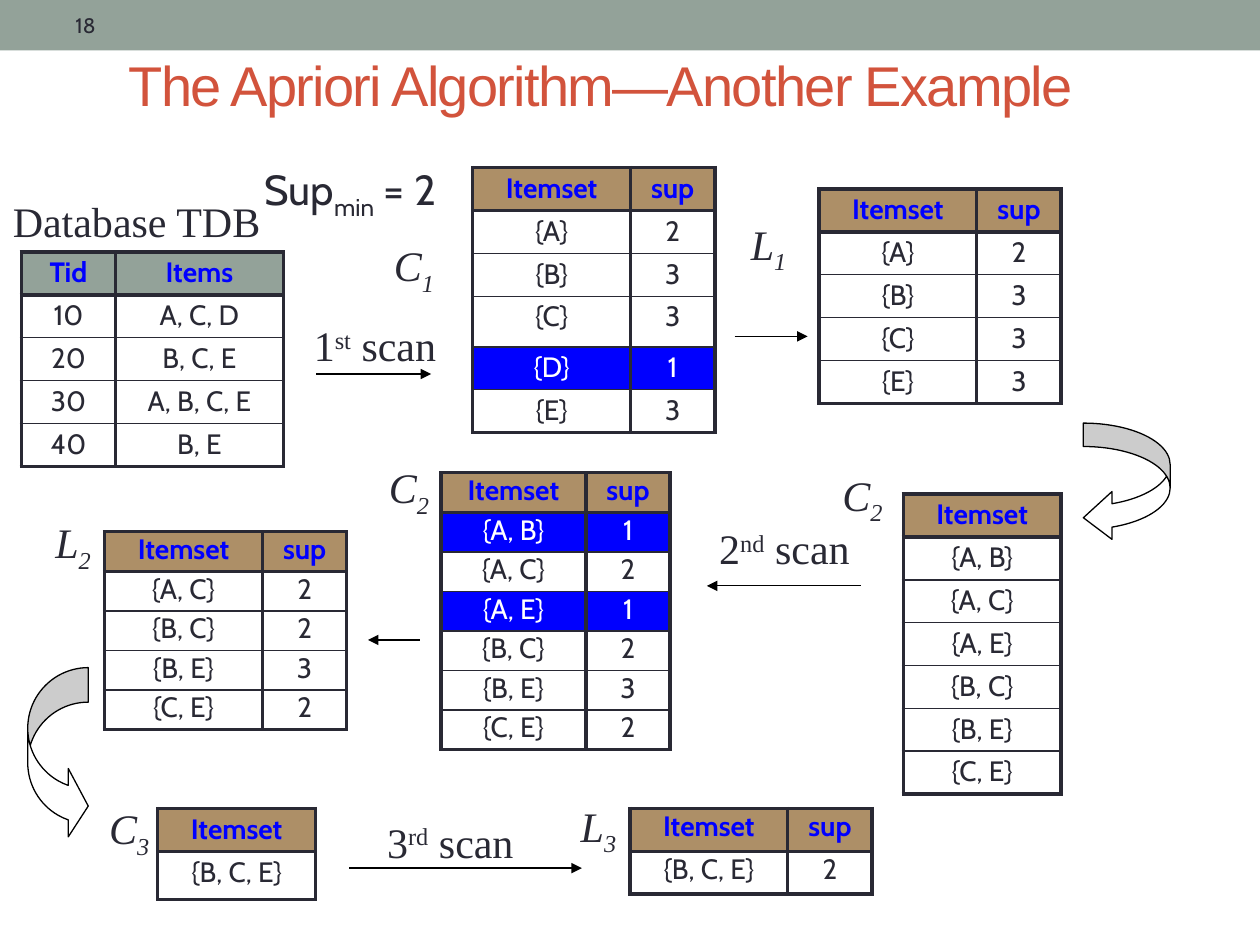
from lxml.etree import SubElement
from pptx import Presentation
from pptx.dml.color import RGBColor
from pptx.enum.shapes import MSO_CONNECTOR, MSO_SHAPE
from pptx.enum.text import MSO_ANCHOR, MSO_AUTO_SIZE, PP_ALIGN
from pptx.oxml.ns import qn
from pptx.util import Cm, Pt

COLORS = {
    "ink": "292934", "title": "D2533C", "sage": "93A299", "tan": "AD8F67",
    "blue": "0000FF", "white": "FFFFFF", "black": "000000",
}
SERIF = {"name": "Times New Roman", "size": Pt(24), "italic": False}
SERIF_ITALIC = {**SERIF, "italic": True}
SANS = {"name": "Cabin", "size": Pt(24)}
CELL = {"name": "Cabin", "size": Pt(16)}


def add_span(para, text, color, format_values, baseline=0):
    span = para.add_run()
    span.text = text
    for name, value in format_values.items():
        setattr(span.font, name, value)
    span.font.color.rgb = RGBColor.from_string(COLORS[color])
    if baseline:
        span.font._element.set("baseline", str(baseline * 1000))
    return span


def add_border(cell, side, points):
    line = SubElement(cell._tc.get_or_add_tcPr(), qn(f"a:ln{side}"), w=str(Pt(points)))
    fill = SubElement(line, qn("a:solidFill"))
    SubElement(fill, qn("a:srgbClr"), val=COLORS["ink"])


deck = Presentation()
deck.slide_width, deck.slide_height = Cm(25.4), Cm(19.05)
page = deck.slides.add_slide(deck.slide_layouts[5])

# Top band and slide number
band = page.shapes.add_shape(MSO_SHAPE.RECTANGLE, 0, 0, deck.slide_width, Cm(1.02))
band.shadow.inherit = False
band.fill.solid()
band.fill.fore_color.rgb = RGBColor.from_string(COLORS["sage"])
band.line.fill.background()

number = page.shapes.add_textbox(Cm(1.27), Cm(0.05), Cm(8.06), Cm(0.91))
number.text_frame.vertical_anchor = MSO_ANCHOR.MIDDLE
add_span(number.text_frame.paragraphs[0], "18", "ink", {**SANS, "size": Pt(12)})

# Title
title = page.shapes.title
title.left, title.top, title.width, title.height = Cm(2.34), Cm(0.84), Cm(21.64), Cm(1.7)
frame = title.text_frame
frame.auto_size = MSO_AUTO_SIZE.NONE
frame.vertical_anchor = MSO_ANCHOR.MIDDLE
frame.paragraphs[0].alignment = PP_ALIGN.LEFT
span = add_span(frame.paragraphs[0], "The Apriori Algorithm—Another Example", "title",
                {"name": "Arial", "size": Pt(32)})
span.font._element.set("spc", "-100")

# Labels: left, top, width, format, (text, baseline) spans
labels = [
    (0, 3.81, 5.51, SERIF, [("Database TDB", 0)]),
    (6.05, 6.32, 3.02, SERIF, [("1", 0), ("st", 30), (" scan", 0)]),
    (14.2, 10.41, 3.23, SERIF, [("2", 0), ("nd", 30), (" scan", 0)]),
    (7.52, 16.33, 3.12, SERIF, [("3", 0), ("rd", 30), (" scan", 0)]),
    (7.67, 4.78, 1.35, SERIF_ITALIC, [("C", 0), ("1", -25)]),
    (14.86, 4.34, 1.27, SERIF_ITALIC, [("L", 0), ("1", -25)]),
    (16.71, 9.4, 1.35, SERIF_ITALIC, [("C", 0), ("2", -25)]),
    (7.57, 9.25, 1.35, SERIF_ITALIC, [("C", 0), ("2", -25)]),
    (0.84, 10.36, 1.27, SERIF_ITALIC, [("L", 0), ("2", -25)]),
    (1.93, 16.13, 1.35, SERIF_ITALIC, [("C", 0), ("3", -25)]),
    (11.43, 16.08, 1.27, SERIF_ITALIC, [("L", 0), ("3", -25)]),
    (5.08, 3.18, 4.88, SANS, [("Sup", 0), ("min", -25), (" = 2", 0)]),
]
for left, top, width, format_values, spans in labels:
    box = page.shapes.add_textbox(Cm(left), Cm(top), Cm(width), Cm(1.27))
    frame = box.text_frame
    frame.word_wrap = format_values is SANS
    frame.vertical_anchor = MSO_ANCHOR.TOP if format_values is SANS else MSO_ANCHOR.MIDDLE
    para = frame.paragraphs[0]
    para.alignment = PP_ALIGN.LEFT if format_values is SANS else PP_ALIGN.CENTER
    for text, baseline in spans:
        add_span(para, text, "ink", format_values, baseline)

# Straight arrows: start x, end x, y
for start, end, y in [(6.38, 8.69, 7.54), (14.81, 16.28, 6.78), (17.35, 14.25, 11.81),
                      (8.46, 7.42, 12.9), (7.04, 11.73, 17.5)]:
    arrow = page.shapes.add_connector(MSO_CONNECTOR.STRAIGHT, Cm(start), Cm(y), Cm(end), Cm(y))
    arrow.line.width = Pt(0.75)
    arrow.line.color.rgb = RGBColor.from_string(COLORS["black"])
    SubElement(arrow.line._get_or_add_ln(), qn("a:tailEnd"), type="triangle")
    SubElement(arrow._element.spPr, qn("a:effectLst"))

# Curved arrows
for kind, left, top, width, height, adjustments in [
    (MSO_SHAPE.CURVED_LEFT_ARROW, 21.84, 8.53, 1.75, 2.39, (0.27, 0.55, 0.33)),
    (MSO_SHAPE.CURVED_RIGHT_ARROW, 0.56, 13.46, 1.22, 3.48, (0.57, 1.13, 0.33)),
]:
    curve = page.shapes.add_shape(kind, Cm(left), Cm(top), Cm(width), Cm(height))
    curve.shadow.inherit = False
    for index, value in enumerate(adjustments):
        curve.adjustments[index] = value
    curve.fill.solid()
    curve.fill.fore_color.rgb = RGBColor.from_string(COLORS["white"])
    curve.line.width = Pt(0.75)
    curve.line.color.rgb = RGBColor.from_string(COLORS["black"])

# Tables: left, top, column widths, row heights, line spacing, header colour, rows
wide = (3.18, 1.7)
header = ("Itemset", "sup")
tables = [
    (0.43, 5.08, (1.9, 3.38), [0.86] * 5, 0.9, "sage",
     [("Tid", "Items"), ("10", "A, C, D"), ("20", "B, C, E"), ("30", "A, B, C, E"), ("40", "B, E")]),
    (9.53, 3.38, wide, [0.86, 0.86, 0.86, 1.02, 0.86, 0.86], 0.9, "tan",
     [header, ("{A}", "2"), ("{B}", "3"), ("{C}", "3"), ("{D}", "1"), ("{E}", "3")]),
    (16.51, 3.81, wide, [0.86] * 5, 0.9, "tan",
     [header, ("{A}", "2"), ("{B}", "3"), ("{C}", "3"), ("{E}", "3")]),
    (18.21, 9.96, (3.18,), [0.86] * 7, 0.9, "tan",
     [("Itemset",), ("{A, B}",), ("{A, C}",), ("{A, E}",), ("{B, C}",), ("{B, E}",), ("{C, E}",)]),
    (8.89, 9.53, (2.92, 1.7), [0.79] * 7, 0.8, "tan",
     [header, ("{A, B}", "1"), ("{A, C}", "2"), ("{A, E}", "1"), ("{B, C}", "2"),
      ("{B, E}", "3"), ("{C, E}", "2")]),
    (2.11, 10.72, wide, [0.79] * 5, 0.8, "tan",
     [header, ("{A, C}", "2"), ("{B, C}", "2"), ("{B, E}", "3"), ("{C, E}", "2")]),
    (3.18, 16.3, (3.18,), [0.86, 0.97], 0.9, "tan", [("Itemset",), ("{B, C, E}",)]),
    (12.7, 16.3, wide, [0.86, 0.86], 0.8, "tan", [header, ("{B, C, E}", "2")]),
]
for left, top, widths, heights, spacing, header_color, rows in tables:
    grid = page.shapes.add_table(len(rows), len(widths), Cm(left), Cm(top),
                                 Cm(sum(widths)), Cm(sum(heights))).table
    grid.first_row = grid.horz_banding = False
    for column, width in zip(grid.columns, widths):
        column.width = Cm(width)
    for row_index, values in enumerate(rows):
        grid.rows[row_index].height = Cm(heights[row_index])
        # Itemsets below the minimum support are highlighted
        if row_index == 0:
            fill_color, text_color = header_color, "blue"
        elif values[-1] == "1":
            fill_color, text_color = "blue", "white"
        else:
            fill_color, text_color = None, "ink"
        for column_index, text in enumerate(values):
            cell = grid.cell(row_index, column_index)
            add_border(cell, "L", 2.25)
            add_border(cell, "R", 2.25)
            add_border(cell, "T", 2.25 if row_index < 2 else 1)
            add_border(cell, "B", 2.25 if row_index in (0, len(rows) - 1) else 1)
            if fill_color:
                cell.fill.solid()
                cell.fill.fore_color.rgb = RGBColor.from_string(COLORS[fill_color])
            else:
                cell.fill.background()
            para = cell.text_frame.paragraphs[0]
            para.alignment = PP_ALIGN.CENTER
            para.line_spacing = spacing
            add_span(para, text, text_color, {**CELL, "bold": row_index == 0})

deck.save("out.pptx")
